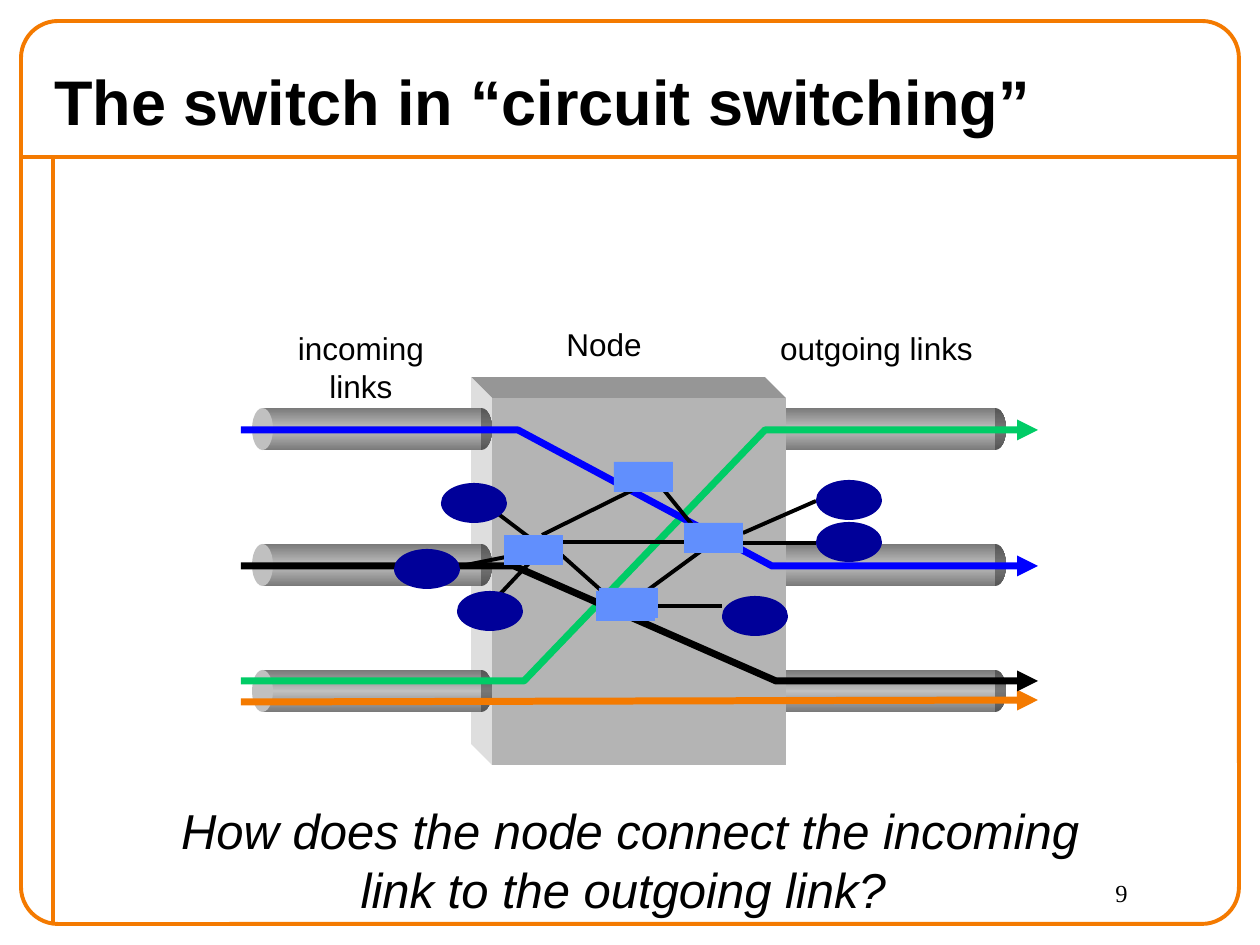
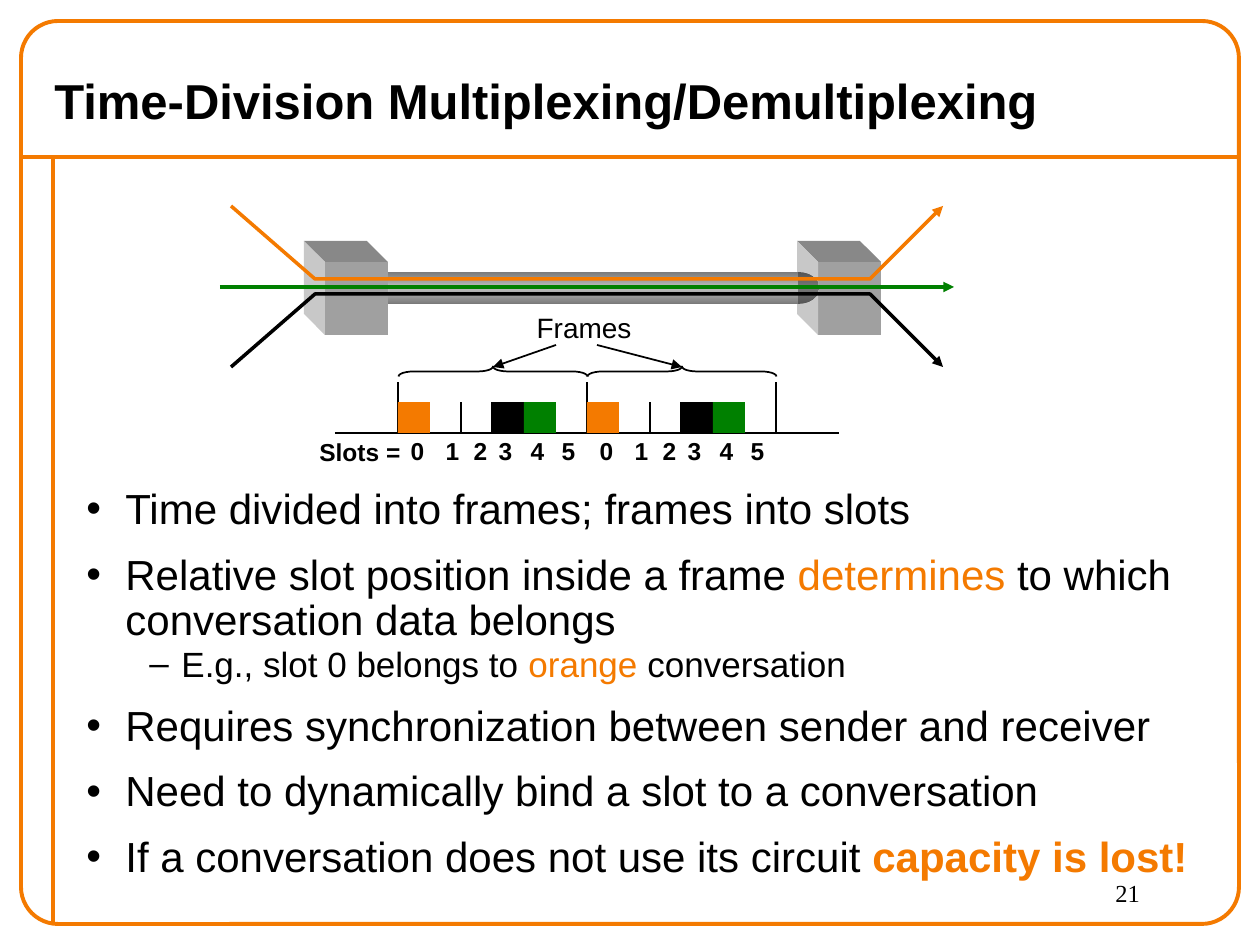
from copy import deepcopy

from lxml.etree import SubElement
from pptx import Presentation
from pptx.dml.color import RGBColor
from pptx.enum.shapes import MSO_CONNECTOR, MSO_SHAPE
from pptx.enum.text import MSO_ANCHOR, PP_ALIGN
from pptx.oxml.ns import qn
from pptx.util import Emu, Pt

PX = 914400 / 126
DEPTH = 21

BLACK = RGBColor(0x00, 0x00, 0x00)
ORANGE = RGBColor(0xF4, 0x7A, 0x00)
GREEN = RGBColor(0x00, 0x80, 0x00)
MINT = RGBColor(0x00, 0xCC, 0x66)
BLUE = RGBColor(0x00, 0x00, 0xFF)
NAVY = RGBColor(0x00, 0x00, 0x99)
SKY = RGBColor(0x61, 0x8F, 0xFD)
SILVER = RGBColor(0xC0, 0xC0, 0xC0)
STEEL = RGBColor(0x7A, 0x7A, 0x7A)
DARK = RGBColor(0x55, 0x55, 0x55)
DUSK = RGBColor(0x77, 0x77, 0x77)
NODE = (RGBColor(0xB4, 0xB4, 0xB4), RGBColor(0x96, 0x96, 0x96), RGBColor(0xDE, 0xDE, 0xDE))
MUX = (RGBColor(0xA0, 0xA0, 0xA0), RGBColor(0x88, 0x88, 0x88), RGBColor(0xC8, 0xC8, 0xC8))


def emu(*sizes):
    return [Emu(round(size * PX)) for size in sizes]


class Deck:
    sans = "Arial"
    serif = "Times New Roman"

    def __init__(self):
        self.show = Presentation()
        self.show.slide_width, self.show.slide_height = emu(1260, 945)
        self.slide = None

    def page(self, title, size, number):
        self.slide = self.show.slides.add_slide(self.show.slide_layouts[6])
        self.line((21, 157), (1239, 157), ORANGE, 2.25)
        self.line((53, 157), (53, 924), ORANGE, 2.25)
        frame = self.shape(MSO_SHAPE.ROUNDED_RECTANGLE, (21, 21, 1218, 903), edge=ORANGE, width=2.25)
        frame.adjustments[0] = 0.041
        self.text((1103, 872, 126, 53), number, 14, font=self.serif)
        head = self.text((42, 53, 1218, 94), title, size, bold=True)
        head.vertical_anchor = MSO_ANCHOR.MIDDLE

    def shape(self, kind, box, fill=None, edge=None, width=1):
        item = self.slide.shapes.add_shape(kind, *emu(*box))
        self.paint(item, fill, edge, width)
        return item

    def paint(self, item, fill=None, edge=None, width=1):
        item.shadow.inherit = False
        if fill is None:
            item.fill.background()
        else:
            item.fill.solid()
            item.fill.fore_color.rgb = fill
        if edge is None:
            item.line.fill.background()
        else:
            item.line.color.rgb = edge
            item.line.width = Pt(width)

    def rect(self, box, fill):
        return self.shape(MSO_SHAPE.RECTANGLE, box, fill)

    def oval(self, box, fill):
        return self.shape(MSO_SHAPE.OVAL, box, fill)

    def shade(self, item, rim, core):
        item.fill.gradient()
        stops = item.element.spPr.find(".//" + qn("a:gsLst"))
        stops.append(deepcopy(stops[0]))
        for stop, place, tint in zip(item.fill.gradient_stops, (0, 0.5, 1), (rim, core, rim)):
            stop.position = place
            stop.color.rgb = tint
        item.fill.gradient_angle = 90

    def tip(self, item):
        SubElement(item.element.spPr.find(qn("a:ln")), qn("a:tailEnd"), type="triangle")

    def line(self, start, end, color=BLACK, width=1, arrow=False):
        item = self.slide.shapes.add_connector(MSO_CONNECTOR.STRAIGHT, *emu(*start, *end))
        item.line.color.rgb = color
        item.line.width = Pt(width)
        if arrow:
            self.tip(item)
        SubElement(item.element.spPr, qn("a:effectLst"))

    def free(self, points, close=False):
        form = self.slide.shapes.build_freeform(*points[0], scale=PX)
        form.add_line_segments(points[1:], close=close)
        return form.convert_to_shape()

    def route(self, points, color, width):
        item = self.free(points)
        self.paint(item, edge=color, width=width)
        self.tip(item)

    def block(self, box, tints):
        x, y, w, h = box
        front, top, side = tints
        self.rect(box, front)
        back = (x - DEPTH, y - DEPTH)
        lid = [back, (x + w - DEPTH, y - DEPTH), (x + w, y), (x, y)]
        flank = [back, (x, y), (x, y + h), (x - DEPTH, y + h - DEPTH)]
        for points, tint in ((lid, top), (flank, side)):
            self.paint(self.free(points, True), tint)

    def tube(self, x, y, w, h, cap):
        self.shade(self.oval((x + w - cap, y, cap, h), DARK), DARK, DUSK)
        self.shade(self.rect((x + cap // 2, y, w - cap, h), STEEL), STEEL, SILVER)
        self.oval((x, y, cap, h), SILVER)

    def style(self, run, size, color=BLACK, bold=False, italic=False, font=None):
        run.font.name = font or self.sans
        run.font.size = Pt(size)
        run.font.bold = bold
        run.font.italic = italic
        run.font.color.rgb = color

    def text(self, box, words, size, align=PP_ALIGN.LEFT, wrap=True, inset=True, **look):
        frame = self.slide.shapes.add_textbox(*emu(*box)).text_frame
        frame.word_wrap = wrap
        if not inset:
            frame.margin_left = frame.margin_right = frame.margin_top = frame.margin_bottom = 0
        frame.text = words
        para = frame.paragraphs[0]
        para.alignment = align
        for run in para.runs:
            self.style(run, size, **look)
        return frame

    def label(self, box, words, size, **look):
        return self.text(box, words, size, PP_ALIGN.CENTER, **look)

    def points(self, box, items):
        frame = self.slide.shapes.add_textbox(*emu(*box)).text_frame
        frame.word_wrap = True
        for index, (level, parts) in enumerate(items):
            para = frame.paragraphs[0] if index == 0 else frame.add_paragraph()
            mark, left, hang, size, gap = (("•", 39, 39, 24, 11.5), ("–", 95, 32, 20, 1.5))[level]
            para.level = level
            para.line_spacing = 0.9
            para.space_before = Pt(gap if index else 0)
            props = para._p.get_or_add_pPr()
            props.set("marL", str(round(left * PX)))
            props.set("indent", str(round(-hang * PX)))
            SubElement(props, qn("a:buFont"), typeface=self.sans)
            SubElement(props, qn("a:buChar"), char=mark)
            para.text = parts[0][0]
            for words, _ in parts[1:]:
                para.add_run().text = words
            for run, (_, look) in zip(para.runs, parts):
                self.style(run, size, **look)


def switch(deck):
    deck.page("The switch in “circuit switching”", 36, "9")
    rows = (408, 544, 670)
    for y in reversed(rows):
        deck.tube(765, y, 241, 42, 21)
    deck.block((492, 398, 294, 367), NODE)
    for y in rows:
        deck.tube(252, y, 240, 42, 21)

    deck.label((266, 329, 190, 76), "incoming links", 18, inset=False)
    deck.label((780, 329, 193, 38), "outgoing links", 18, wrap=False, inset=False)
    deck.line((241, 702), (1038, 700), ORANGE, 4, True)
    for first, bend, turn, last, color in (
        (681, 524, 765, 430, MINT),
        (430, 518, 772, 566, BLUE),
        (566, 514, 776, 681, BLACK),
    ):
        deck.route([(241, first), (bend, first), (turn, last), (1038, last)], color, 4)
    deck.label((566, 325, 76, 38), "Node", 18, wrap=False, inset=False)
    ask = deck.label((88, 794, 1084, 131),
                     "How does the node connect the incoming\vlink to the outgoing link? ", 28, italic=True)
    ask.paragraphs[0].space_before = Pt(3)

    for start, end in (
        ((816, 543), (743, 543)), ((493, 510), (534, 541)), ((548, 543), (486, 609)),
        ((548, 543), (622, 609)), ((702, 542), (556, 542)), ((712, 543), (622, 609)),
        ((542, 535), (655, 479)), ((546, 549), (431, 572)), ((655, 479), (706, 542)),
        ((722, 606), (649, 606)), ((816, 501), (743, 533)),
    ):
        deck.line(start, end, width=2.25)
    for x, y in ((504, 535), (596, 591), (684, 523), (614, 462), (599, 588)):
        deck.rect((x, y, 59, 30), SKY)
    for x, y in ((722, 596), (816, 480), (816, 522), (457, 591), (394, 549), (441, 483)):
        deck.oval((x, y, 66, 40), NAVY)


def timing(deck):
    deck.page("Time-Division Multiplexing/Demultiplexing", 28, "21")
    hot = {"color": ORANGE}
    deck.points((74, 482, 1155, 408), [
        (0, [("Time divided into frames; frames into slots", {})]),
        (0, [("Relative slot position inside a frame ", {}), ("determines", hot),
             (" to which conversation data belongs", {})]),
        (1, [("E.g., slot 0 belongs to ", {}), ("orange", hot), (" conversation", {})]),
        (0, [("Requires synchronization between sender and receiver", {})]),
        (0, [("Need to dynamically bind a slot to a conversation", {})]),
        (0, [("If a conversation does not use its circuit ", {}),
             ("capacity is lost!", {"color": ORANGE, "bold": True})]),
    ])

    base, span = 433, 189
    deck.line((335, base), (839, base))
    for slot in range(13):
        x = 398 + slot * span // 6
        deck.line((x, base), (x, 382 if slot % 6 == 0 else 402))
    for left in (398, 398 + span):
        for slot, color in ((0, ORANGE), (3, BLACK), (4, GREEN)):
            deck.rect((left + slot * span // 6, 402, 32, 31), color)

    deck.block((818, 262, 63, 73), MUX)
    deck.tube(347, 272, 472, 32, 42)
    deck.block((325, 262, 63, 73), MUX)
    deck.route([(231, 206), (315, 279), (870, 279), (943, 206)], ORANGE, 2)
    deck.line((220, 287), (954, 287), GREEN, 2, True)
    deck.route([(231, 367), (315, 294), (870, 294), (943, 367)], BLACK, 2)

    for left in (398, 398 + span):
        brace = deck.shape(MSO_SHAPE.LEFT_BRACE, (left + 90, 277, 10, span), edge=BLACK)
        brace.rotation = 90
        brace.adjustments[0] = 1.5
        for digit, shift in enumerate((0, 35, 63, 88, 120, 151)):
            deck.label((left + shift, 430, 39, 42), str(digit), 14, wrap=False, bold=True)
    deck.label((524, 304, 120, 45), "Frames", 16, wrap=False)
    deck.line((556, 345), (493, 367), arrow=True)
    deck.line((597, 345), (682, 367), arrow=True)
    deck.label((304, 431, 112, 42), "Slots = ", 14, wrap=False, bold=True)


def main():
    deck = Deck()
    switch(deck)
    timing(deck)
    deck.show.save("out.pptx")


if __name__ == "__main__":
    main()
